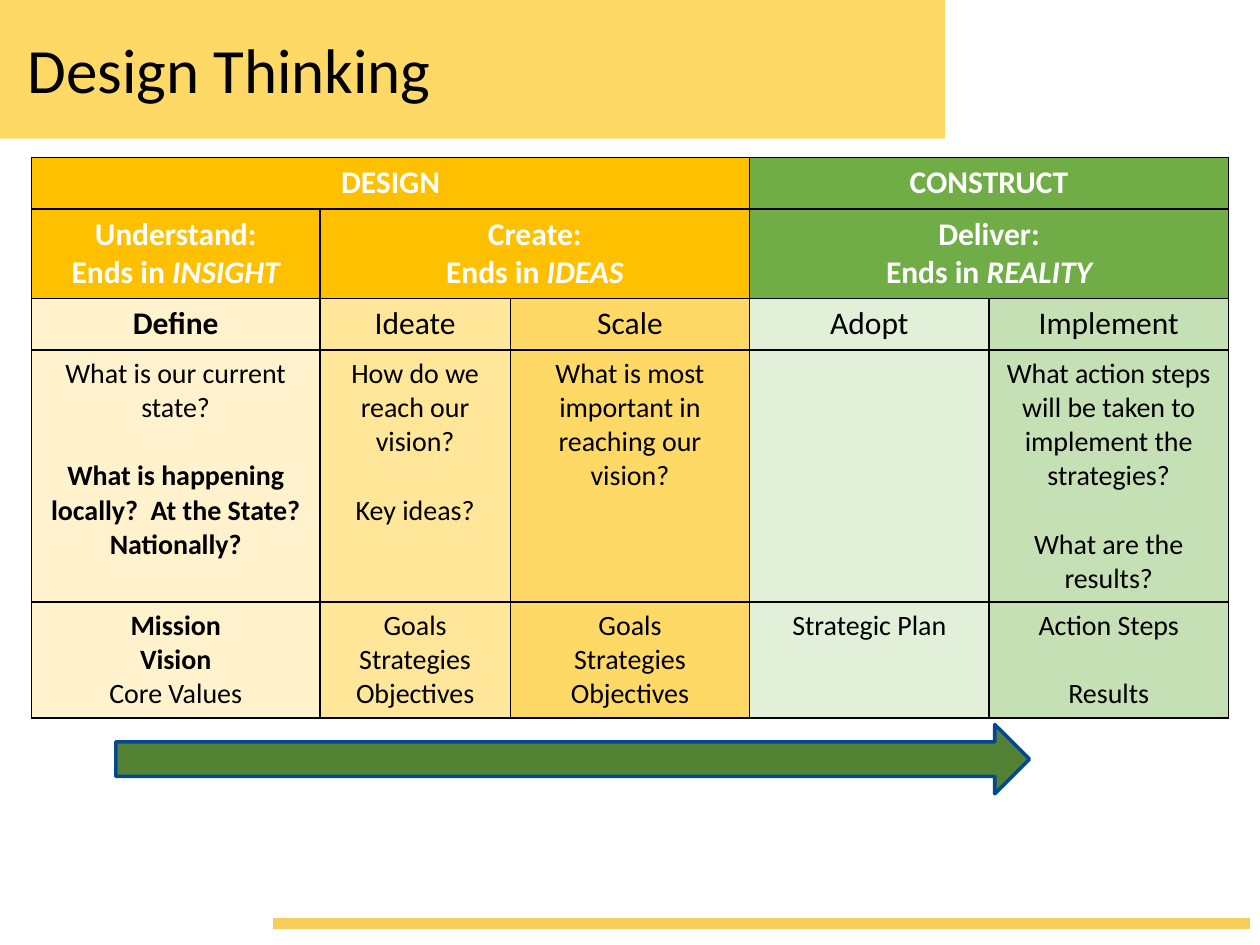
from pptx import Presentation
from pptx.dml.color import RGBColor
from pptx.enum.shapes import MSO_CONNECTOR, MSO_SHAPE
from pptx.enum.text import MSO_ANCHOR, PP_ALIGN
from pptx.oxml.ns import qn
from pptx.util import Inches, Pt
from lxml import etree

CENTER, LEFT = PP_ALIGN.CENTER, PP_ALIGN.LEFT
MIDDLE = MSO_ANCHOR.MIDDLE
RECTANGLE, RIGHT_ARROW = MSO_SHAPE.RECTANGLE, MSO_SHAPE.RIGHT_ARROW
STRAIGHT = MSO_CONNECTOR.STRAIGHT

COLORS = {
    "black": "000000", "white": "FFFFFF",
    "banner": "FFD966", "footer": "F6CD58",
    "design": "FFC000", "construct": "70AD47",
    "define": "FFF2CC", "ideate": "FFE699", "scale": "FFD966",
    "adopt": "E2F0D9", "implement": "C5E0B4",
    "arrow": "548235", "arrow line": "04498F",
}
PHASES = ["define", "ideate", "scale", "adopt", "implement"]
LINE_GAP = 19.5


def color(name):
    return RGBColor.from_string(COLORS[name])


def write(frame, text, size=16, ink="black", bold=False, italic_end="",
          gap=0, align=CENTER):
    """Add a paragraph to the frame, using its empty first one if there is one."""
    para = frame.paragraphs[0] if not frame.text else frame.add_paragraph()
    para.alignment = align
    if gap:
        para.space_before = Pt(gap)
    for words, italic in ((text, False), (italic_end, True)):
        if words:
            span = para.add_run()
            span.text = words
            span.font.name = "Calibri"
            span.font.size = Pt(size)
            span.font.bold = bold
            span.font.italic = italic
            span.font.color.rgb = color(ink)


deck = Presentation()
deck.slide_width, deck.slide_height = Inches(10), Inches(7.5)
page = deck.slides.add_slide(deck.slide_layouts[6])

# Banner, footer line and title
banner = page.shapes.add_shape(RECTANGLE, 0, 0, Inches(7.5), Inches(1.1))
banner.shadow.inherit = False
banner.fill.solid()
banner.fill.fore_color.rgb = color("banner")
banner.line.fill.background()

footer = page.shapes.add_connector(
    STRAIGHT, Inches(2.17), Inches(7.33), Inches(9.92), Inches(7.33))
footer.line.color.rgb = color("footer")
footer.line.width = Pt(6)
etree.SubElement(footer._element.spPr, qn("a:effectLst"))

title = page.shapes.add_textbox(
    Inches(0.12), Inches(0.08), Inches(7.21), Inches(0.92)).text_frame
title.word_wrap = True
title.vertical_anchor = MIDDLE
write(title, "Design Thinking", size=36, align=LEFT)

# Table grid
column_widths = [2.29, 1.51, 1.9, 1.9, 1.9]
row_heights = [0.41, 0.71, 0.41, 2, 0.92]
table = page.shapes.add_table(
    len(row_heights), len(column_widths), Inches(0.25), Inches(1.25),
    Inches(sum(column_widths)), Inches(sum(row_heights))).table
table.first_row = table.horz_banding = False
for column, width in zip(table.columns, column_widths):
    column.width = Inches(width)
for row, height in zip(table.rows, row_heights):
    row.height = Inches(height)

for row_index in range(len(row_heights)):
    for column_index, phase in enumerate(PHASES):
        cell = table.cell(row_index, column_index)
        properties = cell._tc.get_or_add_tcPr()
        for side in ("a:lnL", "a:lnR", "a:lnT", "a:lnB"):
            border = etree.SubElement(properties, qn(side), w=str(Pt(1)))
            solid = etree.SubElement(border, qn("a:solidFill"))
            etree.SubElement(solid, qn("a:srgbClr"), val=COLORS["black"])
        stage = "design" if column_index < 3 else "construct"
        cell.fill.solid()
        cell.fill.fore_color.rgb = color(stage if row_index < 2 else phase)

# Stage headings: row, first column, last column, text, outcome
headings = [
    (0, 0, 2, "DESIGN", ""),
    (0, 3, 4, "CONSTRUCT", ""),
    (1, 0, 0, "Understand:", "INSIGHT"),
    (1, 1, 2, "Create:", "IDEAS"),
    (1, 3, 4, "Deliver:", "REALITY"),
]
for row_index, first, last, text, outcome in headings:
    cell = table.cell(row_index, first)
    if last > first:
        cell.merge(table.cell(row_index, last))
    write(cell.text_frame, text, size=18, ink="white", bold=True)
    if outcome:
        write(cell.text_frame, "Ends in ", size=18, ink="white", bold=True,
              italic_end=outcome)

for column_index, phase in enumerate(PHASES):
    write(table.cell(2, column_index).text_frame, phase.capitalize(),
          size=18, bold=phase == "define")

# Questions and results of each phase: text and any special format
plain, strong = {}, {"bold": True}
spaced = {"gap": LINE_GAP}
plans = [("Goals", plain), ("Strategies", plain), ("Objectives", plain)]
questions = [
    [("What is our current state?", plain),
     ("What is happening locally?  At the State? Nationally?",
      {**strong, **spaced})],
    [("How do we reach our vision?", plain), ("Key ideas?", spaced)],
    [("What is most important in reaching our vision?", plain)],
    [],
    [("What action steps will be taken to implement the strategies?", plain),
     ("What are the results?", spaced)],
]
results = [
    [("Mission", strong), ("Vision", strong), ("Core Values", plain)],
    plans,
    plans,
    [("Strategic Plan", plain)],
    [("Action Steps", plain), ("Results", spaced)],
]
for row_index, contents in ((3, questions), (4, results)):
    for column_index, lines in enumerate(contents):
        for text, style in lines:
            write(table.cell(row_index, column_index).text_frame, text, **style)

# Progress arrow
arrow = page.shapes.add_shape(
    RIGHT_ARROW, Inches(0.92), Inches(5.75), Inches(7.25), Inches(0.55))
arrow.shadow.inherit = False
arrow.fill.solid()
arrow.fill.fore_color.rgb = color("arrow")
arrow.line.color.rgb = color("arrow line")
arrow.line.width = Pt(2)

deck.save("out.pptx")
